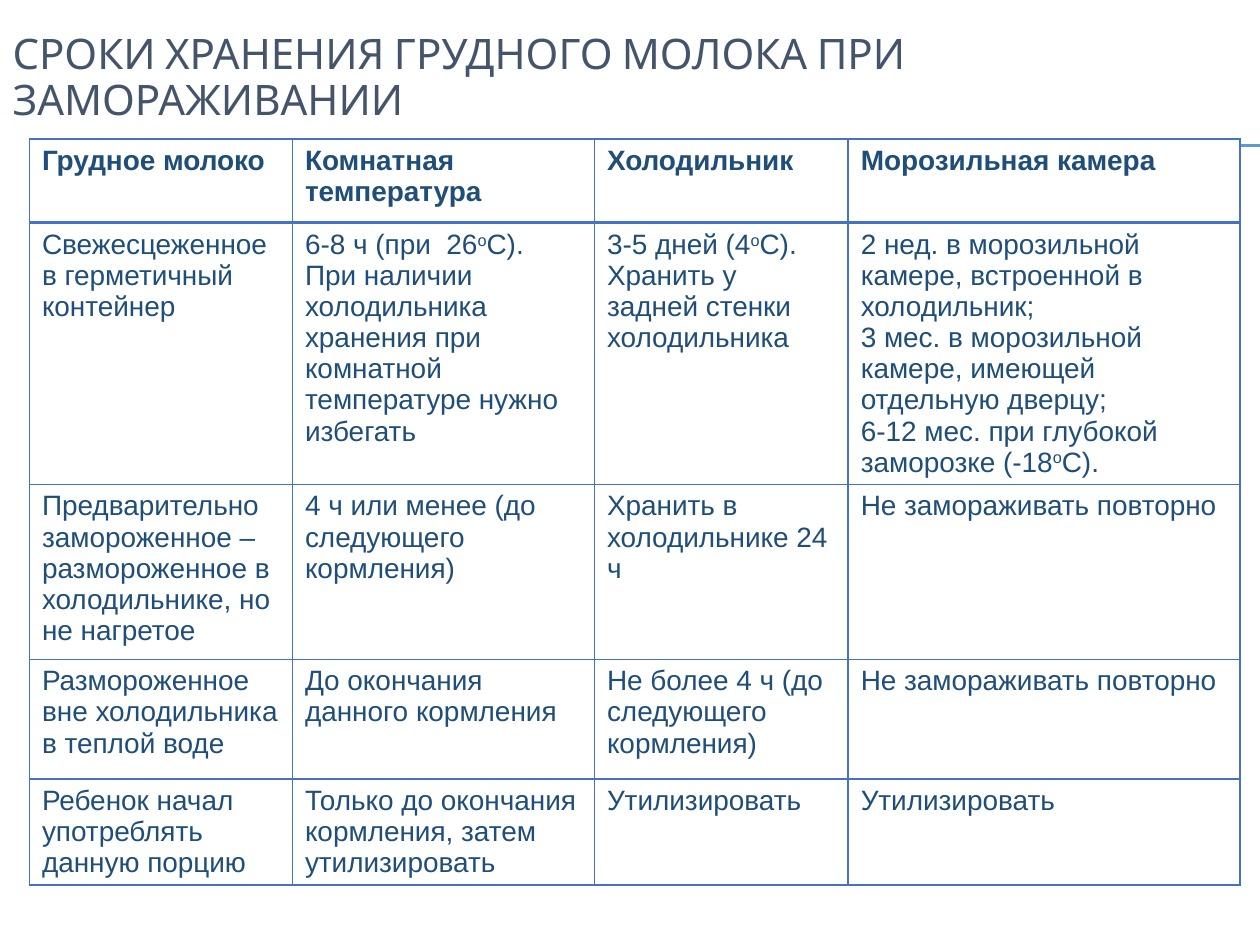
from lxml import etree
from pptx import Presentation
from pptx.dml.color import RGBColor
from pptx.enum.shapes import MSO_CONNECTOR
from pptx.enum.text import MSO_ANCHOR, PP_ALIGN
from pptx.oxml.ns import qn
from pptx.util import Pt

STRAIGHT = MSO_CONNECTOR.STRAIGHT
MIDDLE = MSO_ANCHOR.MIDDLE
LEFT = PP_ALIGN.LEFT

COLORS = {"title": "44546A", "text": "1F4E79", "border": "4472C4",
          "rule": "5B9BD5", "cell": "FFFFFF"}

COL_WIDTHS = [150.3, 172.6, 145, 224]
ROW_HEIGHTS = [48, 137.5, 100, 68.5, 60]

# Text between carets is superscript; a line break starts a new paragraph
ROWS = [
    ["Грудное молоко", "Комнатная температура", "Холодильник", "Морозильная камера"],
    ["Свежесцеженное в герметичный контейнер",
     "6-8 ч (при  26^о^С).\nПри наличии холодильника хранения при комнатной "
     "температуре нужно избегать",
     "3-5 дней (4^о^С).\nХранить у задней стенки холодильника",
     "2 нед. в морозильной камере, встроенной в холодильник;\n"
     "3 мес. в морозильной камере, имеющей отдельную дверцу;\n"
     "6-12 мес. при глубокой заморозке (-18^о^С)."],
    ["Предварительно замороженное – размороженное в холодильнике, но не нагретое",
     "4 ч или менее (до следующего кормления)",
     "Хранить в холодильнике 24 ч", "Не замораживать повторно"],
    ["Размороженное вне холодильника в теплой воде",
     "До окончания данного кормления",
     "Не более 4 ч (до следующего кормления)", "Не замораживать повторно"],
    ["Ребенок начал употреблять данную порцию",
     "Только до окончания кормления, затем утилизировать",
     "Утилизировать", "Утилизировать"],
]


def rgb(name):
    return RGBColor.from_string(COLORS[name])


def set_font(font, name, size, color, bold=False):
    font.name, font.size, font.bold = name, Pt(size), bold
    font.color.rgb = rgb(color)


def add_title(slide, text, left, top, width, height):
    sp = slide.shapes.title
    sp.left, sp.top, sp.width, sp.height = Pt(left), Pt(top), Pt(width), Pt(height)
    tf = sp.text_frame
    tf.text = text
    tf.word_wrap = True
    tf.vertical_anchor = MIDDLE
    p = tf.paragraphs[0]
    p.alignment = LEFT
    p.line_spacing = 0.9
    set_font(p.font, "Cabin", 24, "title")


def add_rules(slide, left, top, width, gap):
    for y in (top, top + gap):
        line = slide.shapes.add_connector(STRAIGHT, Pt(left), Pt(y), Pt(left + width), Pt(y))
        line.line.color.rgb = rgb("rule")
        line.line.width = Pt(0.75)
        etree.SubElement(line._element.spPr, qn("a:effectLst"))


def set_borders(cell, widths):
    tc_pr = cell._tc.get_or_add_tcPr()
    for i, (side, width) in enumerate(widths.items()):
        ln = etree.Element(qn(f"a:ln{side}"), w=str(Pt(width)))
        fill = etree.SubElement(ln, qn("a:solidFill"))
        etree.SubElement(fill, qn("a:srgbClr"), val=COLORS["border"])
        tc_pr.insert(i, ln)


def fill_cell(cell, text, bold):
    cell.fill.solid()
    cell.fill.fore_color.rgb = rgb("cell")
    tf = cell.text_frame
    for i, line in enumerate(text.split("\n")):
        p = tf.add_paragraph() if i else tf.paragraphs[0]
        set_font(p.font, "Arial", 16, "text", bold)
        for j, part in enumerate(line.split("^")):
            r = p.add_run()
            r.text = part
            set_font(r.font, "Arial", 16, "text", bold)
            if j % 2:
                r.font._element.set("baseline", "30000")


def add_storage_table(slide, left, top):
    frame = slide.shapes.add_table(len(ROWS), len(COL_WIDTHS), Pt(left), Pt(top),
                                   Pt(sum(COL_WIDTHS)), Pt(sum(ROW_HEIGHTS)))
    table = frame.table
    table.horz_banding = False
    for column, width in zip(table.columns, COL_WIDTHS):
        column.width = Pt(width)
    for i, (row, height) in enumerate(zip(table.rows, ROW_HEIGHTS)):
        row.height = Pt(height)
        for cell, text in zip(row.cells, ROWS[i]):
            fill_cell(cell, text, bold=i == 0)
            # The line under the header is twice as thick
            set_borders(cell, {"L": 1, "R": 1, "T": 2 if i == 1 else 1,
                               "B": 2 if i == 0 else 1})


def main():
    prs = Presentation()
    prs.slide_width, prs.slide_height = Pt(720), Pt(540)
    slide = prs.slides.add_slide(prs.slide_layouts[5])
    add_rules(slide, 40, 82.8, 680, 0.7)
    add_title(slide, "СРОКИ ХРАНЕНИЯ ГРУДНОГО МОЛОКА ПРИ ЗАМОРАЖИВАНИИ", 0, 0, 682, 90)
    add_storage_table(slide, 16.8, 79.4)
    prs.save("out.pptx")


if __name__ == "__main__":
    main()
